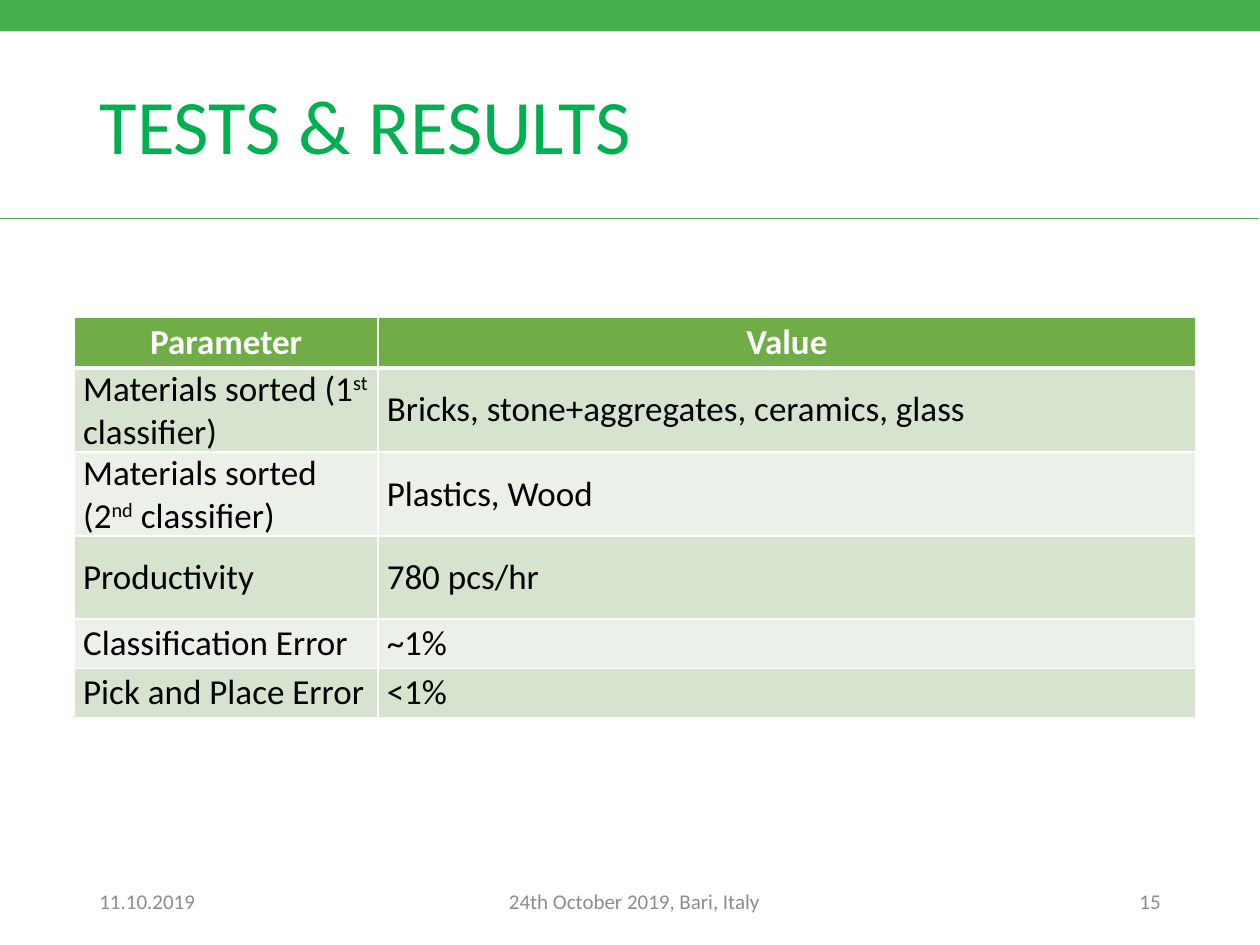
"""Builds the tests and results slide with its parameter table."""
from dataclasses import dataclass

from lxml import etree
from pptx import Presentation
from pptx import util as u
from pptx.dml.color import RGBColor
from pptx.enum import shapes, text
from pptx.oxml.ns import qn


@dataclass(frozen=True)
class Theme:
    """Colours, type sizes and font of the slide."""
    font: str = "Calibri"
    brand: str = "47AE4C"
    title: str = "00B050"
    muted: str = "8C8C8C"
    header: str = "70AD47"
    bands: tuple = ("D5E3CF", "EBF1E9")
    white: str = "FFFFFF"
    ink: str = "000000"
    title_size: int = 44
    table_size: int = 20
    footer_size: int = 12


def write(tf, content, size, color, font, bold=False, align=text.PP_ALIGN.LEFT, spacing=None):
    """Write one paragraph, raising the parts enclosed in carets."""
    p = tf.paragraphs[0]
    p.alignment = align
    if spacing:
        p.line_spacing = spacing
    for i, part in enumerate(content.split("^")):
        r = p.add_run()
        r.text = part
        r.font.name, r.font.size, r.font.bold = font, u.Pt(size), bold
        r.font.color.rgb = RGBColor.from_string(color)
        if i % 2:
            r._r.get_or_add_rPr().set("baseline", "30000")


def set_borders(cell, color, top, bottom):
    """Draw the four borders of a cell, one point wide at the sides."""
    tc_pr = cell._tc.get_or_add_tcPr()
    for i, (side, width) in enumerate((("L", 1), ("R", 1), ("T", top), ("B", bottom))):
        ln = etree.Element(qn(f"a:ln{side}"), w=str(u.Pt(width)))
        fill = etree.SubElement(ln, qn("a:solidFill"))
        etree.SubElement(fill, qn("a:srgbClr"), val=color)
        tc_pr.insert(i, ln)


class SlideBuilder:
    """Holds the theme and the current slide."""

    def __init__(self, slide, theme):
        self.s, self.theme = slide, theme

    def bar(self, x, y, w, h):
        """Add a plain coloured bar."""
        box = map(u.Inches, (x, y, w, h))
        sp = self.s.shapes.add_shape(shapes.MSO_SHAPE.RECTANGLE, *box)
        sp.shadow.inherit = False
        sp.fill.solid()
        sp.fill.fore_color.rgb = RGBColor.from_string(self.theme.brand)
        sp.line.fill.background()

    def rule(self, x, y, w):
        """Add a thin horizontal line."""
        ends = map(u.Inches, (x, y, x + w, y))
        cxn = self.s.shapes.add_connector(shapes.MSO_CONNECTOR.STRAIGHT, *ends)
        cxn.line.color.rgb = RGBColor.from_string(self.theme.brand)
        cxn.line.width = u.Pt(0.5)
        etree.SubElement(cxn._element.spPr, qn("a:effectLst"))

    def title(self, content, x, y, w, h):
        """Place and fill the title placeholder."""
        sp = self.s.shapes.title
        sp.left, sp.top, sp.width, sp.height = map(u.Inches, (x, y, w, h))
        tf = sp.text_frame
        tf.auto_size = text.MSO_AUTO_SIZE.NONE
        tf.vertical_anchor = text.MSO_ANCHOR.MIDDLE
        write(tf, content, self.theme.title_size, self.theme.title, self.theme.font, spacing=0.9)

    def footer(self, content, x, w, align):
        """Add one text of the footer row."""
        sp = self.s.shapes.add_textbox(*map(u.Inches, (x, 6.95, w, 0.4)))
        tf = sp.text_frame
        tf.word_wrap = True
        tf.vertical_anchor = text.MSO_ANCHOR.MIDDLE
        write(tf, content, self.theme.footer_size, self.theme.muted, self.theme.font, align=align)

    def table(self, rows, x, y, widths, heights):
        """Add a banded table whose first row is the header."""
        size = map(u.Inches, (x, y, sum(widths), sum(heights)))
        table = self.s.shapes.add_table(len(rows), len(widths), *size).table
        table.first_row = table.horz_banding = False
        for column, width in zip(table.columns, widths):
            column.width = u.Inches(width)
        for i, (values, height) in enumerate(zip(rows, heights)):
            table.rows[i].height = u.Inches(height)
            for j, value in enumerate(values):
                self.cell(table.cell(i, j), value, i)

    def cell(self, cell, value, row):
        """Fill and format one table cell according to its row."""
        t, is_header = self.theme, row == 0
        cell.margin_left = cell.margin_right = u.Inches(0.07)
        cell.margin_top = cell.margin_bottom = 0
        cell.vertical_anchor = text.MSO_ANCHOR.MIDDLE
        cell.fill.solid()
        fill = t.header if is_header else t.bands[(row - 1) % 2]
        cell.fill.fore_color.rgb = RGBColor.from_string(fill)
        set_borders(cell, t.white, 3 if row == 1 else 1, 3 if is_header else 1)
        write(cell.text_frame, value, t.table_size, t.white if is_header else t.ink, t.font,
              bold=is_header,
              align=text.PP_ALIGN.CENTER if is_header else text.PP_ALIGN.LEFT)


def main():
    """Build and save the slide."""
    prs = Presentation()
    prs.slide_width, prs.slide_height = u.Inches(10), u.Inches(7.5)
    page = SlideBuilder(prs.slides.add_slide(prs.slide_layouts[5]), Theme())
    page.bar(0, 0, 10, 0.25)
    page.rule(-0.01, 1.73, 10)
    page.title("TESTS & RESULTS", 0.69, 0.4, 8.62, 1.25)
    page.footer("11.10.2019", 0.69, 1.12, text.PP_ALIGN.LEFT)
    page.footer("24th October 2019, Bari, Italy", 3.31, 3.45, text.PP_ALIGN.CENTER)
    page.footer("15", 8.33, 0.98, text.PP_ALIGN.RIGHT)
    results = [
        ("Parameter", "Value"),
        ("Materials sorted (1^st^ classifier)", "Bricks, stone+aggregates, ceramics, glass"),
        ("Materials sorted (2^nd^ classifier)", "Plastics, Wood"),
        ("Productivity", "780 pcs/hr"),
        ("Classification Error", "~1%"),
        ("Pick and Place Error", "<1%"),
    ]
    page.table(results, 0.59, 2.52, (2.41, 6.49), (0.4, 0.39, 0.66, 0.66, 0.39, 0.39))
    prs.save("out.pptx")


if __name__ == "__main__":
    main()
